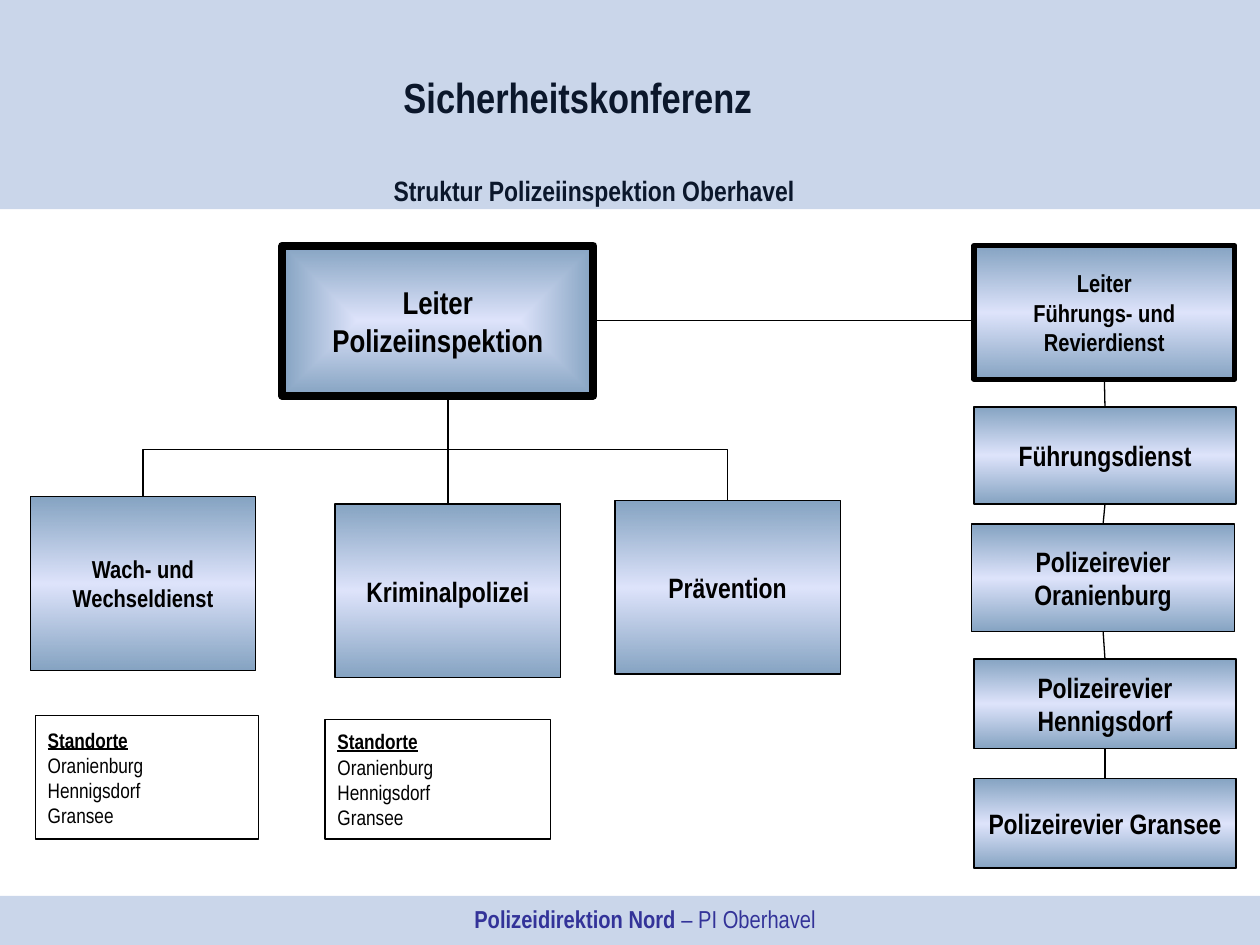
"""Build the organisation chart slide of the Oberhavel police inspectorate."""
from lxml.etree import SubElement
from pptx import Presentation
from pptx.dml.color import RGBColor
from pptx.enum.shapes import MSO_CONNECTOR as Link, MSO_SHAPE as Shape
from pptx.enum.text import MSO_ANCHOR as Anchor, PP_ALIGN as Align
from pptx.oxml import parse_xml
from pptx.oxml.ns import nsdecls, qn
from pptx.util import Inches, Pt

THEME = {
    "font": "Arial Narrow",
    "ink": "000000", "footer": "333399", "band": "2E5DAD",
    "edge": "336699", "glow": "CAD3FA",
    "title": 24, "lead": 18, "unit": 16, "small": 14, "site": 12,
    "hairline": 0.75, "band_alpha": 25, "unit_alpha": 60,
}

TITLE = ("Sicherheitskonferenz", (2.93, 0.52, 3.31, 0.5))
SUBTITLE = ("Struktur Polizeiinspektion Oberhavel", (0.58, 1.31, 8.27, 0.3))
FOOTER = (("Polizeidirektion Nord", True), (" – PI Oberhavel", False))
FOOTER_AREA = (2.48, 7.1, 5.28, 0.39)
BANDS = [(0, 7.11, 10.04, 0.39), (0, 0, 10.04, 1.66)]

HEAD = (["Leiter", "Polizeiinspektion"], (2.24, 1.95, 2.47, 1.19), "lead", 4.5)
DEPARTMENTS = [
    (["Wach- und Wechseldienst"], (0.24, 3.94, 1.79, 1.38), "small", 0.75),
    (["Kriminalpolizei"], (2.66, 4, 1.79, 1.38), "unit", 0.75),
    (["Prävention"], (4.88, 3.97, 1.79, 1.38), "unit", 0.75),
]
PRECINCTS = [
    (["Leiter", "Führungs- und Revierdienst"], (7.73, 1.95, 2.07, 1.06), "small", 3),
    (["Führungsdienst"], (7.73, 3.23, 2.08, 0.77), "unit", 0.75),
    (["Polizeirevier Oranienburg"], (7.71, 4.16, 2.09, 0.85), "unit", 0.75),
    (["Polizeirevier", "Hennigsdorf"], (7.73, 5.23, 2.08, 0.71), "unit", 0.75),
    (["Polizeirevier Gransee"], (7.73, 6.18, 2.08, 0.71), "unit", 0.75),
]
SITES = ["Standorte", "Oranienburg", "Hennigsdorf", "Gransee"]
SITE_AREAS = [(0.28, 5.68, 1.77, 0.98), (2.58, 5.71, 1.79, 0.95)]
BRANCH_Y = 3.57


def color(name):
    return RGBColor.from_string(THEME[name])


def place(part, area):
    part.left, part.top, part.width, part.height = map(Inches, area)


def write(paragraph, text, size, bold=True, underline=False, ink="ink"):
    run = paragraph.add_run()
    run.text = text
    font = run.font
    font.name, font.size = THEME["font"], Pt(THEME[size])
    font.bold, font.underline = bold, underline
    font.color.rgb = color(ink)


def clear_insets(frame):
    frame.margin_left = frame.margin_right = frame.margin_top = frame.margin_bottom = 0


def add_box(slide, area, line_width=None):
    box = slide.shapes.add_shape(Shape.RECTANGLE, *map(Inches, area))
    box.shadow.inherit = False
    if line_width:
        box.line.color.rgb = color("ink")
        box.line.width = Pt(line_width)
    else:
        box.line.fill.background()
    box.text_frame.vertical_anchor = Anchor.MIDDLE
    return box


def add_band(slide, area):
    band = add_box(slide, area)
    band.fill.solid()
    band.fill.fore_color.rgb = color("band")
    tint = band._element.spPr.find(".//" + qn("a:srgbClr"))
    SubElement(tint, qn("a:alpha"), val=str(THEME["band_alpha"] * 1000))


def shade(box, stops, direction):
    alpha = THEME["unit_alpha"] * 1000
    stop_xml = "".join(
        f'<a:gs pos="{at * 1000}"><a:srgbClr val="{THEME[name]}">'
        f'<a:alpha val="{alpha}"/></a:srgbClr></a:gs>' for at, name in stops)
    box._element.spPr.insert(2, parse_xml(
        f'<a:gradFill {nsdecls("a")} rotWithShape="1">'
        f"<a:gsLst>{stop_xml}</a:gsLst>{direction}</a:gradFill>"))


def add_unit(slide, unit, radial=False):
    lines, area, size, line_width = unit
    box = add_box(slide, area, line_width)
    if radial:
        shade(box, [(0, "glow"), (100, "edge")],
              '<a:path path="shape"><a:fillToRect l="50000" t="50000" r="50000" b="50000"/></a:path>')
    else:
        shade(box, [(0, "edge"), (50, "glow"), (100, "edge")],
              '<a:lin ang="5400000" scaled="1"/>')
    frame = box.text_frame
    frame.word_wrap = not radial
    for index, line in enumerate(lines):
        paragraph = frame.add_paragraph() if index else frame.paragraphs[0]
        paragraph.alignment = Align.CENTER
        write(paragraph, line, size)


def add_sites(slide, area):
    box = add_box(slide, area, THEME["hairline"])
    box.fill.background()
    frame = box.text_frame
    for index, site in enumerate(SITES):
        paragraph = frame.add_paragraph() if index else frame.paragraphs[0]
        paragraph.alignment = Align.LEFT
        write(paragraph, site, "site", bold=index == 0, underline=index == 0)


def add_link(slide, start, end, bent=False):
    kind = Link.ELBOW if bent else Link.STRAIGHT
    link = slide.shapes.add_connector(kind, *map(Inches, start + end))
    link.line.color.rgb = color("ink")
    link.line.width = Pt(THEME["hairline"])
    properties = link._element.spPr
    SubElement(properties, qn("a:effectLst"))
    if bent:
        properties.find(qn("a:prstGeom")).set("prst", "bentConnector2")


def top_of(unit):
    left, top, width, _ = unit[1]
    return left + width / 2, top


def bottom_of(unit):
    left, top, width, height = unit[1]
    return left + width / 2, top + height


def add_headings(slide):
    title, subtitle = slide.shapes.title, slide.placeholders[1]
    for holder, (text, area) in ((title, TITLE), (subtitle, SUBTITLE)):
        place(holder, area)
        holder.text_frame.word_wrap = True
        holder.text_frame.vertical_anchor = Anchor.TOP
        paragraph = holder.text_frame.paragraphs[0]
        paragraph.alignment = Align.CENTER
        write(paragraph, text, "title" if holder is title else "unit")
    clear_insets(subtitle.text_frame)
    paragraph = subtitle.text_frame.paragraphs[0]
    paragraph.line_spacing, paragraph.space_before = Pt(24), Pt(0)
    properties = paragraph._p.get_or_add_pPr()
    properties.set("marL", "0")
    properties.set("indent", "0")
    SubElement(properties, qn("a:buNone"))


def add_footer(slide):
    frame = slide.shapes.add_textbox(*map(Inches, FOOTER_AREA)).text_frame
    frame.word_wrap = True
    frame.vertical_anchor = Anchor.MIDDLE
    clear_insets(frame)
    frame.paragraphs[0].alignment = Align.CENTER
    for text, bold in FOOTER:
        write(frame.paragraphs[0], text, "small", bold, ink="footer")


def main():
    deck = Presentation()
    deck.slide_width, deck.slide_height = Inches(10), Inches(7.5)
    slide = deck.slides.add_slide(deck.slide_layouts[1])
    for area in BANDS:
        add_band(slide, area)
    add_footer(slide)
    add_headings(slide)
    add_unit(slide, HEAD, radial=True)
    for unit in DEPARTMENTS + PRECINCTS:
        add_unit(slide, unit)
    for area in SITE_AREAS:
        add_sites(slide, area)

    left, top, width, height = HEAD[1]
    add_link(slide, (left + width, top + height / 2), (PRECINCTS[0][1][0], top + height / 2))
    watch, crime, prevention = DEPARTMENTS
    trunk = top_of(crime)[0]
    add_link(slide, (trunk, top + height), top_of(crime))
    for unit in (watch, prevention):
        add_link(slide, (trunk, BRANCH_Y), top_of(unit), bent=True)
    for upper, lower in zip(PRECINCTS, PRECINCTS[1:]):
        add_link(slide, bottom_of(upper), top_of(lower))
    deck.save("out.pptx")


if __name__ == "__main__":
    main()
